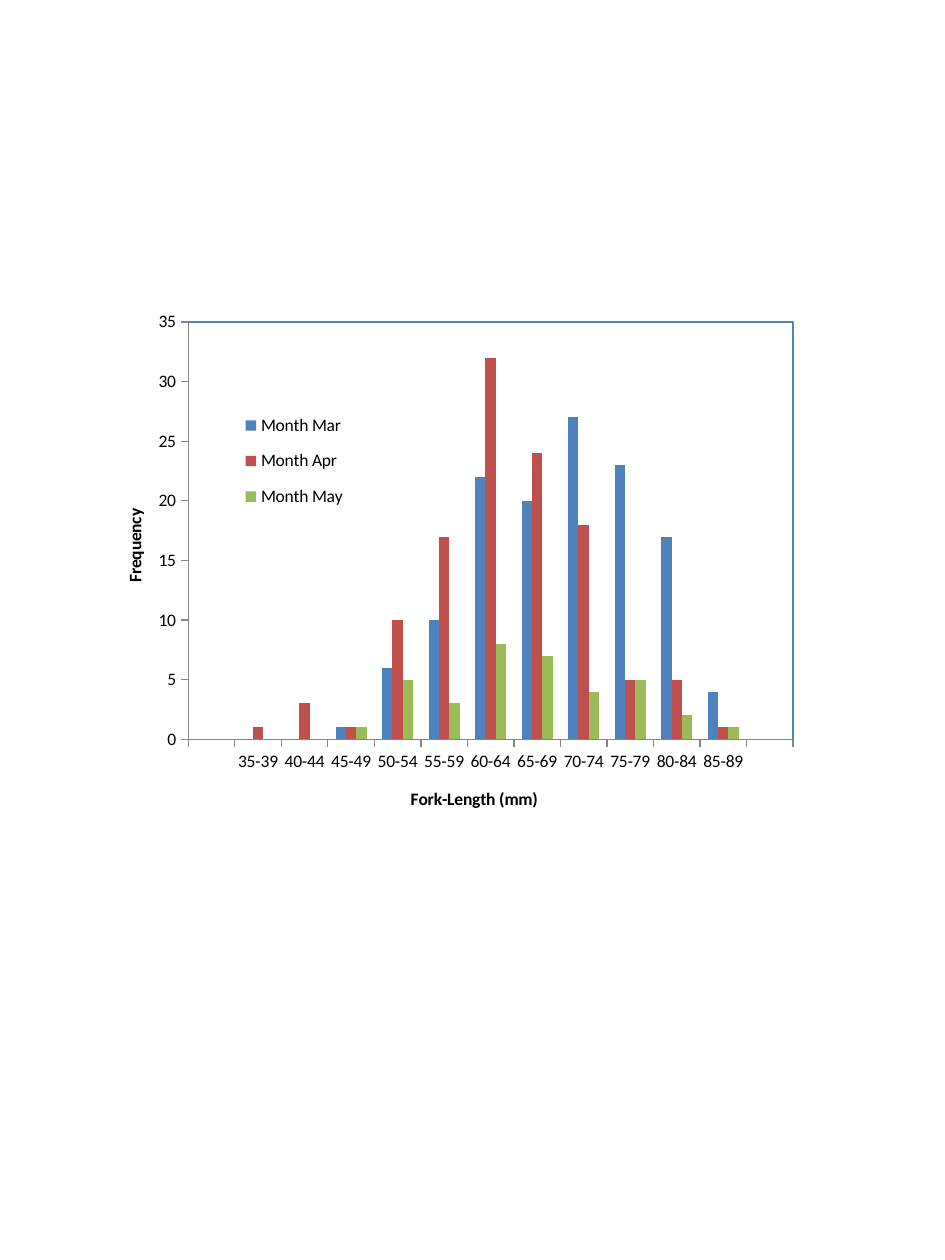
import pptx
import pptx.chart.data
import pptx.dml.color
import pptx.enum.chart
import pptx.oxml
import pptx.oxml.ns
import pptx.util

Cm = pptx.util.Cm
Pt = pptx.util.Pt
RGBColor = pptx.dml.color.RGBColor

BLACK = RGBColor(0x00, 0x00, 0x00)
AXIS_GREY = RGBColor(0x86, 0x86, 0x86)
BLUE = RGBColor(0x4F, 0x81, 0xBD)
RED = RGBColor(0xC0, 0x50, 0x4D)
GREEN = RGBColor(0x9B, 0xBB, 0x59)

FONT = "Calibri"
LENGTH_CLASSES = ["", *(f"{low}-{low + 4}" for low in range(35, 90, 5)), ""]
MONTHS = [
    ("Month Mar", BLUE, [None, None, None, 1, 6, 10, 22, 20, 27, 23, 17, 4, None]),
    ("Month Apr", RED, [None, 1, 3, 1, 10, 17, 32, 24, 18, 5, 5, 1, None]),
    ("Month May", GREEN, [None, None, None, 1, 5, 3, 8, 7, 4, 5, 2, 1, None]),
]


def set_layout(parent, index, target=None, **fractions):
    """Place a chart part by fractions of the chart's size (x, y, w, h)."""
    for old_layout in parent.findall(pptx.oxml.ns.qn("c:layout")):
        parent.remove(old_layout)
    inner = f'<c:layoutTarget val="{target}"/>' if target else ""
    modes = "".join(f'<c:{key}Mode val="edge"/>' for key in "xy")
    values = "".join(f'<c:{key} val="{value}"/>' for key, value in fractions.items())
    parent.insert(index, pptx.oxml.parse_xml(
        f'<c:layout {pptx.oxml.ns.nsdecls("c")}><c:manualLayout>'
        f"{inner}{modes}{values}</c:manualLayout></c:layout>"))


def format_axis(axis, title, x, y):
    axis.has_major_gridlines = False
    axis.major_tick_mark = pptx.enum.chart.XL_TICK_MARK.OUTSIDE
    axis.minor_tick_mark = pptx.enum.chart.XL_TICK_MARK.NONE
    axis.format.line.color.rgb = AXIS_GREY
    axis.format.line.width = Pt(0.75)
    run = axis.axis_title.text_frame.paragraphs[0].add_run()
    run.text = title
    run.font.name = FONT
    run.font.size = Pt(10)
    run.font.bold = True
    run.font.color.rgb = BLACK
    set_layout(axis.axis_title._element, 1, x=x, y=y)


def outline_plot_area(plot_area):
    plot_area.append(pptx.oxml.parse_xml(
        f'<c:spPr {pptx.oxml.ns.nsdecls("c", "a")}><a:noFill/><a:ln w="9525">'
        f'<a:solidFill><a:srgbClr val="{BLUE}"/></a:solidFill></a:ln></c:spPr>'))


def add_frequency_chart(slide, left, top, width, height):
    chart_data = pptx.chart.data.CategoryChartData()
    chart_data.categories = LENGTH_CLASSES
    for month, _, counts in MONTHS:
        chart_data.add_series(month, counts)
    chart = slide.shapes.add_chart(
        pptx.enum.chart.XL_CHART_TYPE.COLUMN_CLUSTERED,
        left, top, width, height, chart_data).chart
    chart.has_title = False
    chart.font.name = FONT
    chart.font.size = Pt(10)
    chart.font.color.rgb = BLACK

    columns = chart.plots[0]
    columns.gap_width = 150
    columns.overlap = 0
    columns.vary_by_categories = False
    for series, (_, color, _) in zip(columns.series, MONTHS):
        series.format.fill.solid()
        series.format.fill.fore_color.rgb = color

    format_axis(chart.category_axis, "Fork-Length (mm)", x=0.4, y=0.88)
    format_axis(chart.value_axis, "Frequency", x=0.02, y=0.38)
    chart.value_axis.minimum_scale = 0
    chart.value_axis.maximum_scale = 35
    chart.value_axis.major_unit = 5

    chart.has_legend = True
    chart.legend.position = pptx.enum.chart.XL_LEGEND_POSITION.RIGHT
    chart.legend.include_in_layout = False
    set_layout(chart.legend._element, 1, x=0.15, y=0.19, w=0.2, h=0.22)

    plot_area = chart._chartSpace.chart.plotArea
    set_layout(plot_area, 0, target="inner", x=0.11, y=0.05, w=0.8, h=0.75)
    outline_plot_area(plot_area)


def main():
    presentation = pptx.Presentation()
    presentation.slide_width = Cm(19.05)
    presentation.slide_height = Cm(25.4)
    slide = presentation.slides.add_slide(presentation.slide_layouts[6])
    add_frequency_chart(slide, Cm(2.12), Cm(5.93), Cm(15.24), Cm(11.22))
    presentation.save("out.pptx")


if __name__ == "__main__":
    main()
